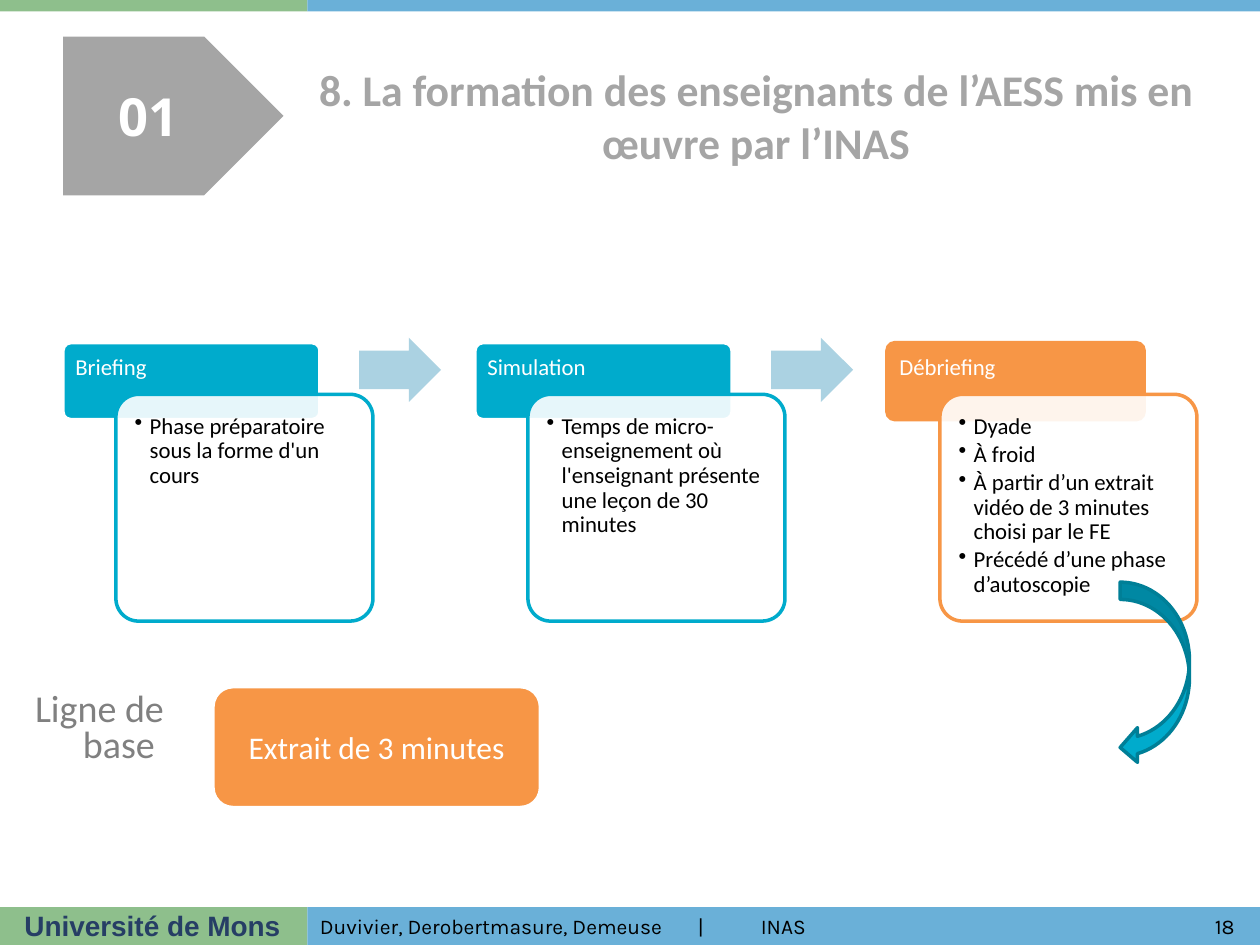
from lxml import etree
from pptx import Presentation
from pptx.dml.color import RGBColor
from pptx.enum.shapes import MSO_SHAPE
from pptx.enum.text import MSO_ANCHOR, MSO_AUTO_SIZE, PP_ALIGN
from pptx.oxml.ns import qn
from pptx.util import Inches, Pt

LEFT, CENTER = PP_ALIGN.LEFT, PP_ALIGN.CENTER
TOP, MIDDLE = MSO_ANCHOR.TOP, MSO_ANCHOR.MIDDLE
NO_AUTOSIZE = MSO_AUTO_SIZE.NONE
RECTANGLE = MSO_SHAPE.RECTANGLE
ROUNDED = MSO_SHAPE.ROUNDED_RECTANGLE
RIGHT_ARROW = MSO_SHAPE.RIGHT_ARROW
CURVED_ARROW = MSO_SHAPE.CURVED_LEFT_ARROW
PENTAGON = MSO_SHAPE.PENTAGON

WHITE = RGBColor(0xFF, 0xFF, 0xFF)
BLACK = RGBColor(0x00, 0x00, 0x00)
GREEN = RGBColor(0x8E, 0xBF, 0x8C)
BLUE = RGBColor(0x6A, 0xB0, 0xD8)
NAVY = RGBColor(0x26, 0x3E, 0x65)
TEAL = RGBColor(0x00, 0xAB, 0xCC)
DARK_TEAL = RGBColor(0x00, 0x7F, 0x97)
PALE_BLUE = RGBColor(0xAB, 0xD2, 0xE2)
ORANGE = RGBColor(0xF7, 0x96, 0x46)
GRAY = RGBColor(0xA5, 0xA5, 0xA5)
DARK_GRAY = RGBColor(0x80, 0x80, 0x80)

BAND_SPLIT = 2.44
PHASE_LEFT, PHASE_STEP = 0.5, 3.27
PHASES = [
    ("Briefing", TEAL, WHITE, ["Phase préparatoire sous la forme d'un cours"]),
    ("Simulation", TEAL, WHITE, [
        "Temps de micro-enseignement où l'enseignant présente une leçon de 30 minutes",
    ]),
    ("Débriefing", ORANGE, ORANGE, [
        "Dyade",
        "À froid",
        "À partir d’un extrait vidéo de 3 minutes choisi par le FE",
        "Précédé d’une phase d’autoscopie",
    ]),
]


def write_text(holder, lines, size, color, font="Calibri", bold=False, align=LEFT,
               anchor=TOP, insets=(0.1, 0.05, 0.1, 0.05), spacing=1.0, after=0,
               margin=0, indent=0, bullet=None, tabs=()):
    frame = holder.text_frame
    frame.auto_size = NO_AUTOSIZE
    frame.word_wrap = True
    frame.vertical_anchor = anchor
    (frame.margin_left, frame.margin_top,
     frame.margin_right, frame.margin_bottom) = map(Inches, insets)
    frame.text = "\n".join(lines)
    for paragraph in frame.paragraphs:
        paragraph.alignment = align
        paragraph.line_spacing = spacing
        paragraph.space_before = Pt(0)
        paragraph.space_after = Pt(after)
        properties = paragraph._p.get_or_add_pPr()
        properties.set("marL", str(Inches(margin)))
        properties.set("indent", str(Inches(indent)))
        if bullet:
            etree.SubElement(properties, qn("a:buChar"), char=bullet)
        if tabs:
            stops = etree.SubElement(properties, qn("a:tabLst"))
            for stop in tabs:
                etree.SubElement(stops, qn("a:tab"), pos=str(Inches(stop)), algn="l")
        for run in paragraph.runs:
            run.font.size = Pt(size)
            run.font.name = font
            run.font.bold = bold
            run.font.color.rgb = color


def add_label(slide, box, lines, size, color, **text_format):
    label = slide.shapes.add_textbox(*map(Inches, box))
    write_text(label, lines, size, color, **text_format)


def add_block(slide, kind, box, fill, line=None, adjustments=(), opacity=None):
    block = slide.shapes.add_shape(kind, *map(Inches, box))
    block.shadow.inherit = False
    block.fill.solid()
    block.fill.fore_color.rgb = fill
    if opacity:
        fill_color = block._element.spPr.find(qn("a:solidFill"))[0]
        etree.SubElement(fill_color, qn("a:alpha"), val=str(opacity * 1000))
    if line is None:
        block.line.fill.background()
    else:
        block.line.color.rgb = line
        block.line.width = Pt(2)
    for index, value in enumerate(adjustments):
        block.adjustments[index] = value
    return block


def add_band(slide, top, height):
    add_block(slide, RECTANGLE, (0, top, BAND_SPLIT, height), GREEN)
    add_block(slide, RECTANGLE, (BAND_SPLIT, top, 10 - BAND_SPLIT, height), BLUE)


def add_phase(slide, left, name, accent, outline, points):
    add_block(slide, ROUNDED, (left, 2.72, 2.04, 0.61), accent, outline, [0.1])
    add_label(slide, (left, 2.72, 2.04, 0.41), [name], 13, WHITE,
              insets=(0.1, 0.1, 0.1, 0.05), spacing=0.9)
    add_block(slide, ROUNDED, (left + 0.42, 3.13, 2.04, 1.8), WHITE, accent, [0.1], 90)
    add_label(slide, (left + 0.47, 3.19, 1.93, 1.69), points, 13, BLACK,
              insets=(0.1, 0.1, 0.1, 0.1), spacing=0.9, after=2,
              margin=0.12, indent=-0.12, bullet="•")


def add_heading(slide):
    add_block(slide, PENTAGON, (0.5, 0.29, 1.75, 1.26), GRAY)
    add_label(slide, (0.58, 0.62, 1.19, 0.61), ["01"], 30, WHITE,
              font="Open Sans", bold=True, align=CENTER)
    title = slide.shapes.title
    title.left, title.top, title.width, title.height = map(Inches, (1, 0.29, 9, 1.25))
    write_text(title, ["8. La formation des enseignants de l’AESS mis en œuvre par l’INAS"],
               25, GRAY, bold=True, align=CENTER, anchor=MIDDLE, margin=1)


def add_footer(slide):
    add_band(slide, 7.2, 0.3)
    add_label(slide, (-0.01, 7.16, BAND_SPLIT, 0.37), ["Université de Mons"], 16, NAVY,
              font="Arial", bold=True, align=CENTER)
    add_label(slide, (BAND_SPLIT, 7.2, 7, 0.3), ["Duvivier, Derobertmasure, Demeuse\t|\tINAS"],
              12, BLACK, font="Karla", anchor=MIDDLE, tabs=(2.86, 3.04))
    add_label(slide, (9.44, 7.2, 0.56, 0.3), ["18"], 12, BLACK,
              font="Karla", align=CENTER, anchor=MIDDLE)


def add_baseline(slide):
    extract = add_block(slide, ROUNDED, (1.69, 5.45, 2.6, 0.96), ORANGE, WHITE)
    write_text(extract, ["Extrait de 3 minutes"], 18, WHITE, align=CENTER, anchor=MIDDLE)
    add_block(slide, CURVED_ARROW, (8.89, 4.62, 0.55, 1.45), TEAL, DARK_TEAL)
    add_label(slide, (0.18, 5.45, 1.24, 0.96), ["Ligne de base"], 21.7, DARK_GRAY,
              spacing=0.8, margin=0.38, indent=-0.38)


def main():
    deck = Presentation()
    deck.slide_width, deck.slide_height = Inches(10), Inches(7.5)
    slide = deck.slides.add_slide(deck.slide_layouts[5])
    add_band(slide, 0, 0.09)
    add_footer(slide)
    for index, phase in enumerate(PHASES):
        left = PHASE_LEFT + index * PHASE_STEP
        add_phase(slide, left, *phase)
        if index < len(PHASES) - 1:
            add_block(slide, RIGHT_ARROW, (left + 2.35, 2.68, 0.65, 0.51), PALE_BLUE,
                      adjustments=[0.6, 0.5])
    add_baseline(slide)
    add_heading(slide)
    deck.save("out.pptx")


if __name__ == "__main__":
    main()
